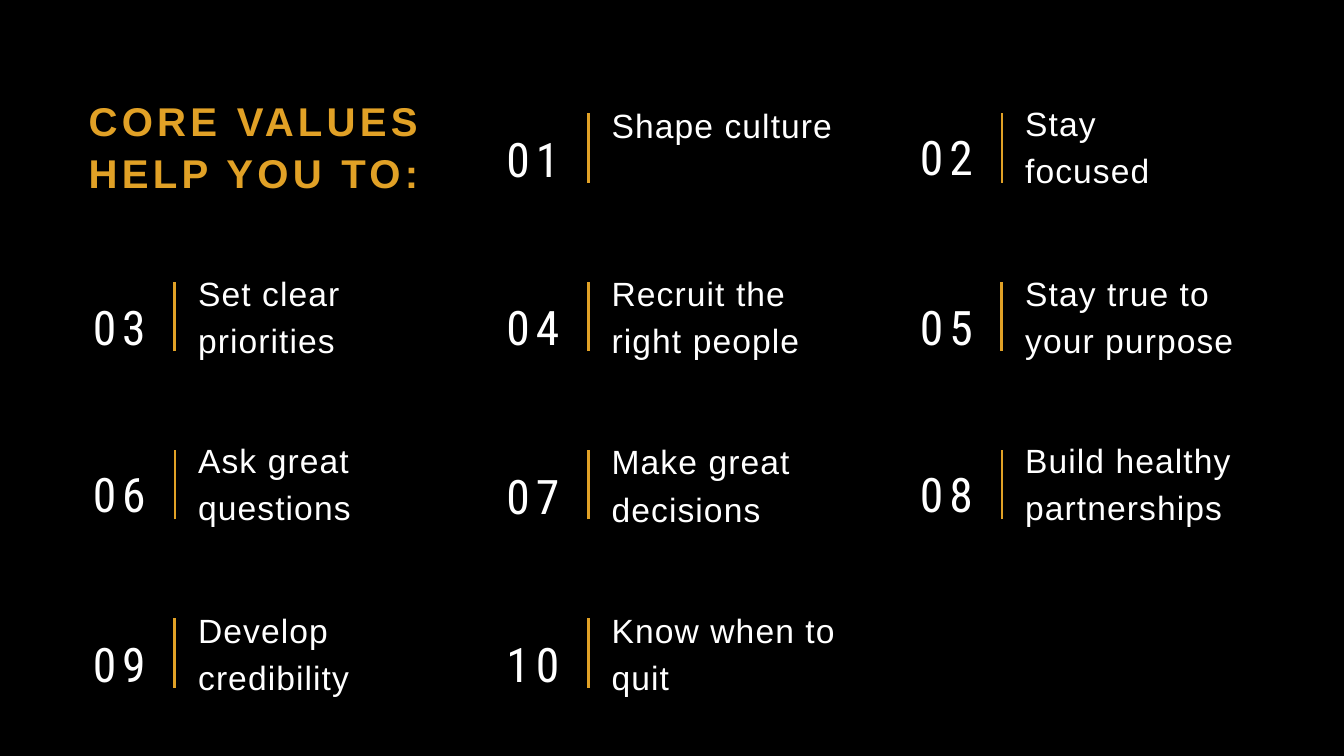
from lxml import etree
from pptx import Presentation
from pptx.dml.color import RGBColor
from pptx.enum import shapes, text
from pptx.oxml import ns
from pptx.util import Cm, Pt

HEADING = ["CORE VALUES", "HELP YOU TO:"]
# Each value: paragraphs of its label, in reading order after the heading cell
VALUES = [
    ["Shape culture"],
    ["Stay", "focused"],
    ["Set clear priorities"],
    ["Recruit the right people"],
    ["Stay true to your purpose"],
    ["Ask great questions"],
    ["Make great decisions"],
    ["Build healthy partnerships"],
    ["Develop credibility"],
    ["Know when to quit"],
]
LIGHT_NUMBERS = {2, 6, 8}  # ungrouped, thinner rule, text slightly higher

COLORS = {"background": "000000", "gold": "E1A126", "white": "FFFFFF"}
STYLES = {
    "heading": dict(font="Arial", size=43, color="gold", bold=True, spacing=460, leading=55),
    "label": dict(font="Arial", size=36, color="white", bold=False, spacing=120, leading=50.4),
    "number": dict(font="Roboto Condensed", size=51, color="white", bold=False,
                   spacing=630, leading=71.4),
}

# Grid in centimetres
COLUMNS = 3
LEFT, COLUMN_STEP, ROW_STEP = 3.35, 15.63, 6.36
RULE_X, RULE_TOP, RULE_BOTTOM = 3.25, 4.29, 6.91
LABEL_X, LABEL_TOP, LABEL_WIDTH, LABEL_HEIGHT = 4.14, 3.71, 8.69, 3.45
NUMBER_TOP, NUMBER_WIDTH, NUMBER_HEIGHT = 4.55, 2.16, 2.36
LIGHT_LIFT = 0.07


def add_text(parent, lines, style_name, left, top, width, height, align=None):
    style = STYLES[style_name]
    box = parent.add_textbox(Cm(left), Cm(top), Cm(width), Cm(height))
    frame = box.text_frame
    frame.word_wrap = True
    frame.auto_size = text.MSO_AUTO_SIZE.SHAPE_TO_FIT_TEXT
    frame.margin_left = frame.margin_right = frame.margin_top = frame.margin_bottom = 0
    for index, line in enumerate(lines):
        paragraph = frame.add_paragraph() if index else frame.paragraphs[0]
        paragraph.line_spacing = Pt(style["leading"])
        paragraph.alignment = align
        run = paragraph.add_run()
        run.text = line
        run.font.name = style["font"]
        run.font.size = Pt(style["size"])
        run.font.bold = style["bold"]
        run.font.color.rgb = RGBColor.from_string(COLORS[style["color"]])
        run._r.get_or_add_rPr().set("spc", str(style["spacing"]))


def add_rule(parent, x, top, bottom, weight):
    rule = parent.add_connector(shapes.MSO_CONNECTOR.STRAIGHT,
                                Cm(x), Cm(bottom), Cm(x), Cm(top))
    rule.line.color.rgb = RGBColor.from_string(COLORS["gold"])
    rule.line.width = Pt(weight)
    etree.SubElement(rule._element.spPr, ns.qn("a:effectLst"))


def add_value(slide, number, lines):
    row, column = divmod(number, COLUMNS)
    x, y = LEFT + column * COLUMN_STEP, row * ROW_STEP
    light = number in LIGHT_NUMBERS
    parent = slide.shapes if light else slide.shapes.add_group_shape().shapes
    lift = LIGHT_LIFT if light else 0

    add_rule(parent, x + RULE_X, y + RULE_TOP, y + RULE_BOTTOM, 2.25 if light else 3)
    add_text(parent, lines, "label", x + LABEL_X, y + LABEL_TOP - lift,
             LABEL_WIDTH, LABEL_HEIGHT + lift)
    add_text(parent, [f"{number:02d}"], "number", x, y + NUMBER_TOP - lift,
             NUMBER_WIDTH, NUMBER_HEIGHT + lift, text.PP_ALIGN.RIGHT)


def main():
    presentation = Presentation()
    presentation.slide_width, presentation.slide_height = Cm(50.8), Cm(28.575)
    slide = presentation.slides.add_slide(presentation.slide_layouts[6])
    slide.background.fill.solid()
    slide.background.fill.fore_color.rgb = RGBColor.from_string(COLORS["background"])

    # The heading takes the first grid cell, the values fill the rest
    add_text(slide.shapes, HEADING, "heading", LEFT, 3.53, 13.39, 3.81)
    for number, lines in enumerate(VALUES, start=1):
        add_value(slide, number, lines)

    presentation.save("out.pptx")


if __name__ == "__main__":
    main()
